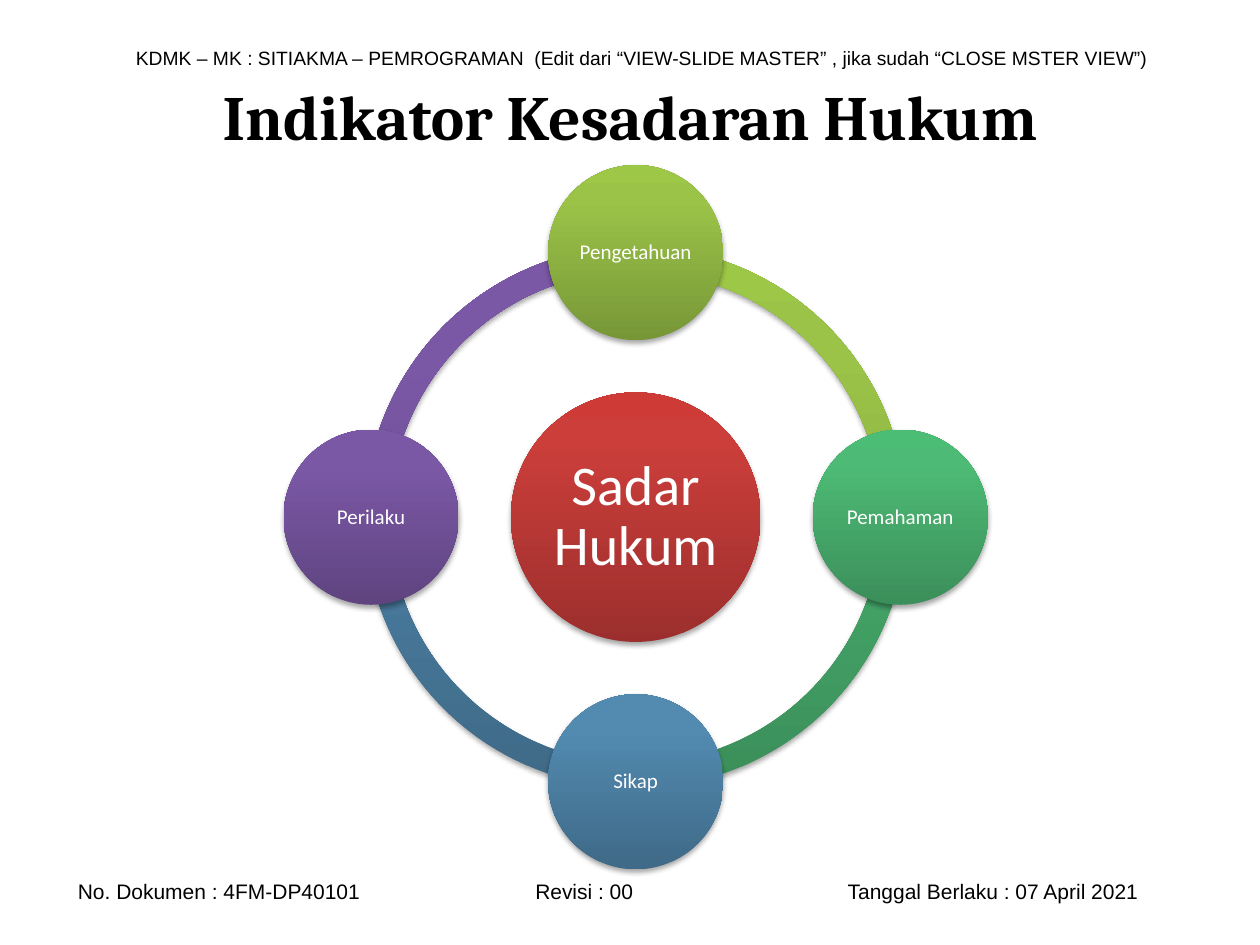
from dataclasses import dataclass
from math import cos, radians, sin

from pptx import Presentation
from pptx.dml.color import RGBColor
from pptx.enum.shapes import MSO_SHAPE
from pptx.enum.text import MSO_ANCHOR, MSO_AUTO_SIZE, PP_ALIGN
from pptx.oxml import parse_xml
from pptx.oxml.ns import nsdecls
from pptx.util import Inches, Pt


@dataclass(frozen=True)
class Theme:
    text: str = "000000"
    on_fill: str = "FFFFFF"
    # Gradients run from bottom to top, with stops at 0, 80 and 100 %
    red: tuple = ("9C2F2D", "CB3E3A", "CE3B37")
    lime: tuple = ("779737", "9BC348", "9DC746")
    green: tuple = ("3B8F5A", "4DBA75", "4BBD75")
    blue: tuple = ("3F6A88", "528AB0", "518BB3")
    purple: tuple = ("5F4480", "7B58A6", "7C57A8")
    title_font: str = "Cambria"
    note_font: str = "Arial"
    label_font: str = "Calibri"
    title_size: int = 36
    header_size: int = 11
    footer_size: int = 12
    hub_size: int = 32
    node_size: int = 12


THEME = Theme()


def add_text(p, text, font, size, color, bold=False):
    r = p.add_run()
    r.text = text
    r.font.name = font
    r.font.size = Pt(size)
    r.font.bold = bold
    r.font.color.rgb = RGBColor.from_string(color)


def add_note(s, box, text, size, tabs=()):
    """One line of document details, with left tab stops in inches."""
    sp = s.shapes.add_textbox(*map(Inches, box))
    tf = sp.text_frame
    tf.word_wrap = True
    tf.auto_size = MSO_AUTO_SIZE.SHAPE_TO_FIT_TEXT
    tf.vertical_anchor = MSO_ANCHOR.MIDDLE
    p = tf.paragraphs[0]
    if tabs:
        stops = "".join(f'<a:tab pos="{Inches(t)}" algn="l"/>' for t in tabs)
        p._p.get_or_add_pPr().append(
            parse_xml(f'<a:tabLst {nsdecls("a")}>{stops}</a:tabLst>'))
    add_text(p, text, THEME.note_font, size, THEME.text)


def add_title(s, box, text):
    sp = s.shapes.title
    sp.left, sp.top, sp.width, sp.height = map(Inches, box)
    tf = sp.text_frame
    tf.vertical_anchor = MSO_ANCHOR.MIDDLE
    p = tf.paragraphs[0]
    p.alignment = PP_ALIGN.CENTER
    add_text(p, text, THEME.title_font, THEME.title_size, THEME.text, bold=True)


def style_shape(sp, colors):
    """Three-stop vertical gradient and a soft shadow below, without a line."""
    stops = "".join(
        f'<a:gs pos="{pos * 1000}"><a:srgbClr val="{color}"/></a:gs>'
        for pos, color in zip((0, 80, 100), colors))
    sp.line.fill.background()
    sp.shadow.inherit = False
    spPr = sp._element.spPr
    spPr.find("{*}prstGeom").addnext(parse_xml(
        f'<a:gradFill {nsdecls("a")} rotWithShape="1"><a:gsLst>{stops}</a:gsLst>'
        '<a:lin ang="16200000" scaled="0"/></a:gradFill>'))
    spPr.find("{*}effectLst").append(parse_xml(
        f'<a:outerShdw {nsdecls("a")} blurRad="{Pt(3.1)}" dist="{Pt(1.8)}" '
        'dir="5400000" rotWithShape="0"><a:srgbClr val="000000">'
        '<a:alpha val="35000"/></a:srgbClr></a:outerShdw>'))


def add_circle(shapes, cx, cy, d, text, size, colors, inset):
    sp = shapes.add_shape(MSO_SHAPE.OVAL, Inches(cx - d / 2), Inches(cy - d / 2),
                          Inches(d), Inches(d))
    style_shape(sp, colors)
    tf = sp.text_frame
    tf.word_wrap = True
    tf.vertical_anchor = MSO_ANCHOR.MIDDLE
    tf.margin_left = tf.margin_right = Inches(inset)
    tf.margin_top = tf.margin_bottom = Inches(inset)
    p = tf.paragraphs[0]
    p.alignment = PP_ALIGN.CENTER
    p.line_spacing = 0.9
    add_text(p, text, THEME.label_font, size, THEME.on_fill)


def add_arc(shapes, box, start, colors):
    """Quarter of the ring, clockwise from the start angle in degrees."""
    sp = shapes.add_shape(MSO_SHAPE.BLOCK_ARC, *map(Inches, box))
    # Angles are stored in 60000ths of a degree, adjustments in 100000ths
    sp.adjustments[0] = start * 0.6
    sp.adjustments[1] = (start + 90) % 360 * 0.6
    sp.adjustments[2] = 0.046
    style_shape(sp, colors)


def add_cycle(s, box, hub, nodes):
    """Ring of nodes around a hub; nodes run clockwise from the top."""
    left, top, width, height = box
    cx, cy = left + width / 2, top + height / 2
    node_d, hub_d = 1.39, 1.98
    radius = (width - node_d) / 2
    ring_d = 4.3
    ring = (cx - ring_d / 2, cy - ring_d / 2, ring_d, ring_d)
    shapes = s.shapes.add_group_shape().shapes
    angles = [(270 + 90 * i) % 360 for i in range(len(nodes))]

    # Ring segments lie behind the circles
    for angle, (_, colors) in reversed(list(zip(angles, nodes))):
        add_arc(shapes, ring, angle, colors)
    add_circle(shapes, cx, cy, hub_d, hub, THEME.hub_size, THEME.red, 0.04)
    for angle, (text, colors) in zip(angles, nodes):
        add_circle(shapes, cx + radius * cos(radians(angle)),
                   cy + radius * sin(radians(angle)),
                   node_d, text, THEME.node_size, colors, 0.02)


def main():
    prs = Presentation()
    prs.slide_width, prs.slide_height = Inches(10), Inches(7.5)
    s = prs.slides.add_slide(prs.slide_layouts[5])

    # Header and footer
    add_note(s, (0.98, 0.31, 8.35, 0.29),
             "KDMK – MK : SITIAKMA – PEMROGRAMAN  (Edit dari “VIEW-SLIDE MASTER” , "
             "jika sudah “CLOSE MSTER VIEW”)", THEME.header_size)
    add_note(s, (0.52, 6.92, 9.13, 0.3),
             "No. Dokumen : 4FM-DP40101\tRevisi : 00\tTanggal Berlaku : 07 April 2021",
             THEME.footer_size, tabs=(3.63, 6.11))

    # Title and cycle diagram
    add_title(s, (0.5, 0.29, 9, 1.25), "Indikator Kesadaran Hukum")
    add_cycle(s, (2.25, 1.31, 5.59, 5.59), "Sadar Hukum", [
        ("Pengetahuan", THEME.lime),
        ("Pemahaman", THEME.green),
        ("Sikap", THEME.blue),
        ("Perilaku", THEME.purple),
    ])
    prs.save("out.pptx")


if __name__ == "__main__":
    main()
